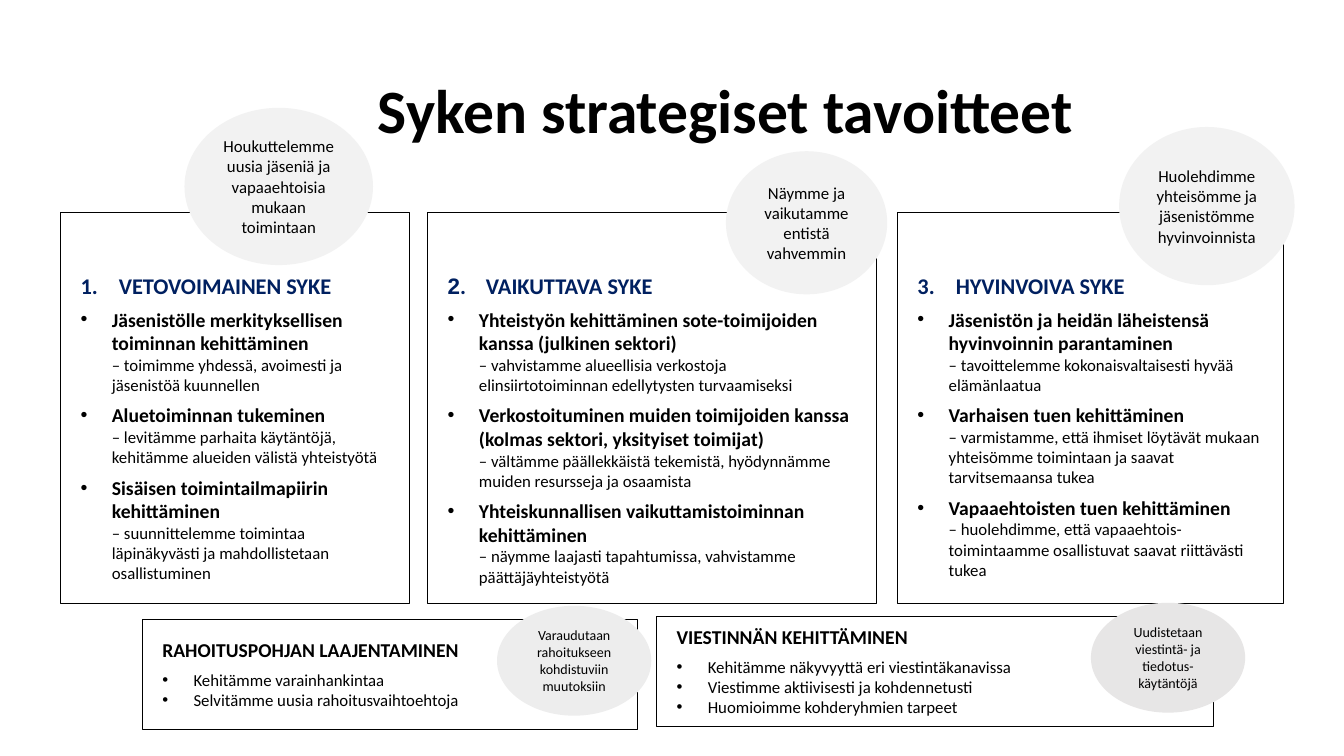
from lxml.etree import SubElement
from pptx import Presentation
from pptx.dml.color import RGBColor
from pptx.enum.shapes import MSO_SHAPE
from pptx.enum.text import MSO_ANCHOR, PP_ALIGN
from pptx.oxml.ns import qn
from pptx.util import Inches, Pt

COLORS = {
    "text": "000000",
    "heading": "002060",
    "goal": "F2F2F2",
    "funding": "EDEDED",
    "communication": "E7E6E6",
}
FONT = "Calibri"
GOAL_TOP, GOAL_HEIGHT = 2.11, 3.87

GOALS = [
    (0.6, 3.46, "1", FONT, "VETOVOIMAINEN SYKE", [
        ("Jäsenistölle merkityksellisen toiminnan kehittäminen",
         "– toimimme yhdessä, avoimesti ja jäsenistöä kuunnellen"),
        ("Aluetoiminnan tukeminen",
         "– levitämme parhaita käytäntöjä, kehitämme alueiden välistä yhteistyötä"),
        ("Sisäisen toimintailmapiirin kehittäminen",
         "– suunnittelemme toimintaa läpinäkyvästi ja mahdollistetaan osallistuminen"),
    ]),
    (4.24, 4.45, "2", "Arial", "VAIKUTTAVA SYKE", [
        ("Yhteistyön kehittäminen sote-toimijoiden kanssa (julkinen sektori)",
         "– vahvistamme alueellisia verkostoja\n"
         "elinsiirtotoiminnan edellytysten turvaamiseksi"),
        ("Verkostoituminen muiden toimijoiden kanssa (kolmas sektori, yksityiset toimijat)",
         "– vältämme päällekkäistä tekemistä, hyödynnämme muiden resursseja ja osaamista"),
        ("Yhteiskunnallisen vaikuttamistoiminnan kehittäminen",
         "– näymme laajasti tapahtumissa, vahvistamme päättäjäyhteistyötä"),
    ]),
    (8.9, 3.83, "3", FONT, "HYVINVOIVA SYKE", [
        ("Jäsenistön ja heidän läheistensä hyvinvoinnin parantaminen",
         "– tavoittelemme kokonaisvaltaisesti hyvää elämänlaatua"),
        ("Varhaisen tuen kehittäminen",
         "– varmistamme, että ihmiset löytävät mukaan yhteisömme toimintaan "
         "ja saavat tarvitsemaansa tukea"),
        ("Vapaaehtoisten tuen kehittäminen",
         "– huolehdimme, että vapaaehtois-\n"
         "toimintaamme osallistuvat saavat riittävästi tukea"),
    ]),
]

SUPPORTS = [
    ((1.41, 6.14, 4.91, 1.09), "RAHOITUSPOHJAN LAAJENTAMINEN", [
        "Kehitämme varainhankintaa",
        "Selvitämme uusia rahoitusvaihtoehtoja",
    ]),
    ((6.51, 6.11, 5.52, 1.09), "VIESTINNÄN KEHITTÄMINEN", [
        "Kehitämme näkyvyyttä eri viestintäkanavissa",
        "Viestimme aktiivisesti ja kohdennetusti",
        "Huomioimme kohderyhmien tarpeet",
    ]),
]

BUBBLES = [
    ((1.83, 1.07, 1.87, 1.56), "goal", 12, MSO_ANCHOR.MIDDLE,
     "Houkuttelemme uusia jäseniä ja vapaaehtoisia mukaan toimintaan"),
    ((4.93, 6.01, 1.53, 1.09), "funding", 10, MSO_ANCHOR.TOP,
     "Varaudutaan rahoitukseen kohdistuviin muutoksiin"),
    ((10.82, 5.98, 1.53, 1.09), "communication", 10, MSO_ANCHOR.TOP,
     "Uudistetaan viestintä- ja tiedotus-käytäntöjä"),
    ((7.2, 1.5, 1.6, 1.42), "goal", 12, MSO_ANCHOR.MIDDLE,
     "Näymme ja vaikutamme entistä vahvemmin"),
    ((11.1, 1.26, 1.74, 1.57), "goal", 12, MSO_ANCHOR.MIDDLE,
     "Huolehdimme yhteisömme ja jäsenistömme hyvinvoinnista"),
]


def color(name):
    return RGBColor.from_string(COLORS[name])


def add_run(paragraph, text, size, bold=False, color_name="text", font=FONT):
    for index, line in enumerate(text.split("\n")):
        if index:
            paragraph.add_line_break()
        run = paragraph.add_run()
        run.text = line
        run.font.name = font
        run.font.size = Pt(size)
        run.font.bold = bold
        run.font.color.rgb = color(color_name)


def add_bullet(frame):
    paragraph = frame.add_paragraph()
    properties = paragraph._p.get_or_add_pPr()
    properties.set("marL", str(Inches(0.31)))
    properties.set("indent", str(Inches(-0.31)))
    SubElement(properties, qn("a:buFont"), typeface="Arial")
    SubElement(properties, qn("a:buChar"), char="•")
    return paragraph


def add_tab_stop(paragraph, position):
    tabs = SubElement(paragraph._p.get_or_add_pPr(), qn("a:tabLst"))
    SubElement(tabs, qn("a:tab"), pos=str(Inches(position)), algn="l")


def add_panel(slide, box, anchor, top_margin):
    shape = slide.shapes.add_shape(MSO_SHAPE.RECTANGLE, *map(Inches, box))
    shape.shadow.inherit = False
    shape.fill.background()
    shape.line.color.rgb = color("text")
    shape.line.width = Pt(0.25)
    frame = shape.text_frame
    frame.word_wrap = True
    frame.vertical_anchor = anchor
    frame.margin_left = frame.margin_right = frame.margin_bottom = Inches(0.2)
    frame.margin_top = Inches(top_margin)
    heading = frame.paragraphs[0]
    heading.alignment = PP_ALIGN.LEFT
    heading.space_after = Pt(6)
    return frame, heading


def add_title(slide, box):
    frame = slide.shapes.add_textbox(*map(Inches, box)).text_frame
    frame.word_wrap = True
    frame.vertical_anchor = MSO_ANCHOR.MIDDLE
    paragraph = frame.paragraphs[0]
    paragraph.alignment = PP_ALIGN.CENTER
    paragraph.line_spacing = 0.9
    add_run(paragraph, "Syken strategiset tavoitteet", 44, bold=True)


def add_goal(slide, box, number, number_font, name, actions):
    frame, heading = add_panel(slide, box, MSO_ANCHOR.TOP, 0.59)
    add_tab_stop(heading, 0.38)
    add_run(heading, number, 16, True, "heading", number_font)
    add_run(heading, f".\t{name}", 16, True, "heading")
    for action, detail in actions:
        paragraph = add_bullet(frame)
        paragraph.alignment = PP_ALIGN.LEFT
        paragraph.space_after = Pt(6)
        add_run(paragraph, action, 14, bold=True)
        paragraph.add_line_break()
        add_run(paragraph, detail, 12)


def add_support(slide, box, name, actions):
    frame, heading = add_panel(slide, box, MSO_ANCHOR.MIDDLE, 0.2)
    add_run(heading, name, 14, bold=True)
    for action in actions:
        paragraph = add_bullet(frame)
        paragraph.alignment = PP_ALIGN.LEFT
        add_run(paragraph, action, 12)


def add_bubble(slide, box, fill, size, anchor, text):
    shape = slide.shapes.add_shape(MSO_SHAPE.OVAL, *map(Inches, box))
    shape.shadow.inherit = False
    shape.fill.solid()
    shape.fill.fore_color.rgb = color(fill)
    shape.line.fill.background()
    frame = shape.text_frame
    frame.word_wrap = True
    frame.vertical_anchor = anchor
    paragraph = frame.paragraphs[0]
    paragraph.alignment = PP_ALIGN.CENTER
    if anchor == MSO_ANCHOR.MIDDLE:
        paragraph.space_after = Pt(6)
    add_run(paragraph, text, size)


def main():
    presentation = Presentation()
    presentation.slide_width = Inches(13.33)
    presentation.slide_height = Inches(7.5)
    slide = presentation.slides.add_slide(presentation.slide_layouts[6])
    add_title(slide, (2.02, 0.4, 10.36, 1.45))
    for left, width, *content in GOALS:
        add_goal(slide, (left, GOAL_TOP, width, GOAL_HEIGHT), *content)
    for support in SUPPORTS:
        add_support(slide, *support)
    for bubble in BUBBLES:
        add_bubble(slide, *bubble)
    presentation.save("out.pptx")


if __name__ == "__main__":
    main()
